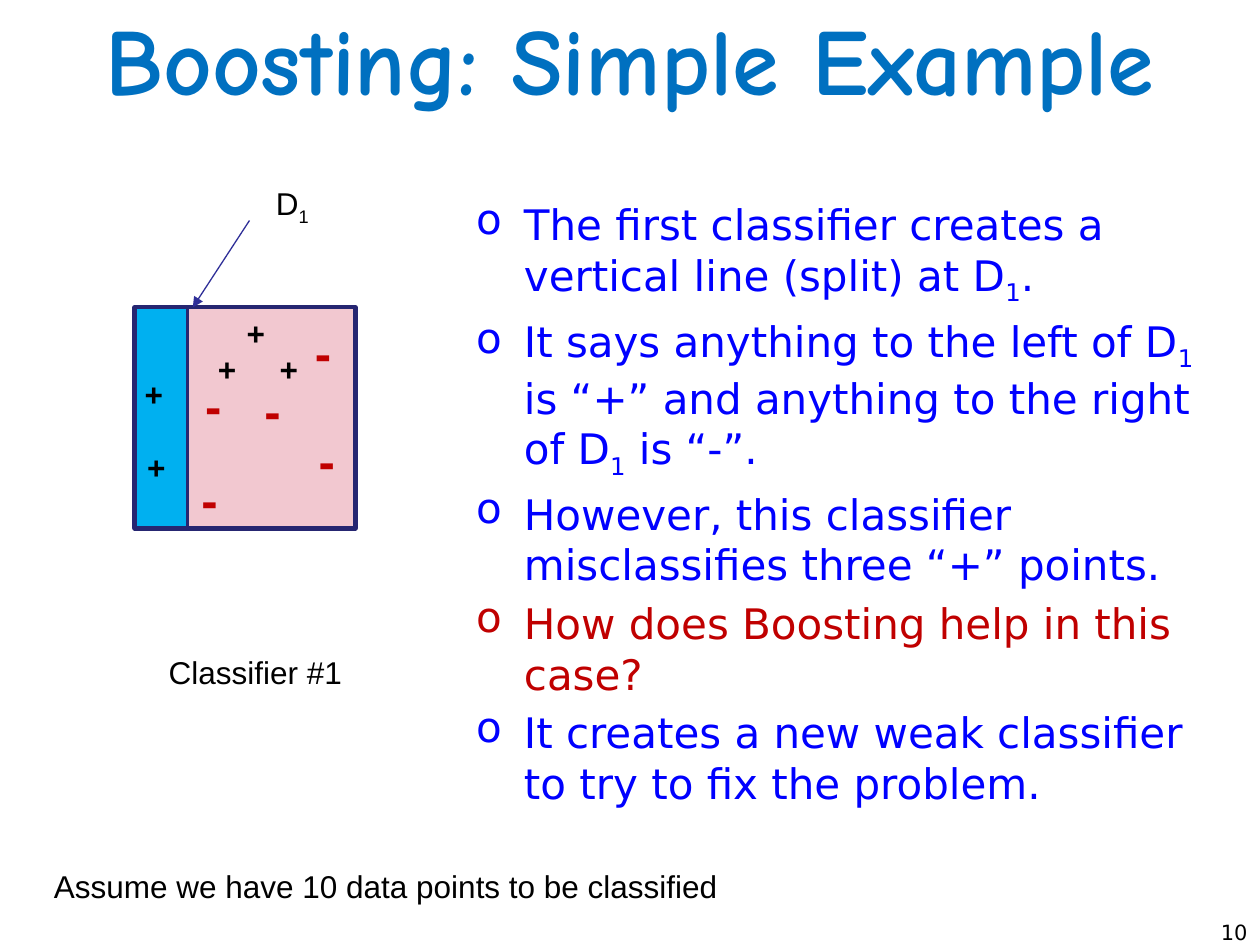
from lxml import etree
from pptx import Presentation
from pptx import util as u
from pptx.dml.color import RGBColor
from pptx.enum import shapes, text
from pptx.oxml.ns import qn

BLACK, BLUE, RED, NAVY = "000000", "0000FF", "C00000", "262671"
LABEL = dict(size=18, name="Arial", color=BLACK)
BODY = dict(size=24, name="DejaVu Sans")

TITLE = "Boosting: Simple Example"
# Text between underscores is set as a subscript.
BULLETS = [
    ("The first classifier creates a vertical line (split) at D_1_.", BLUE),
    ("It says anything to the left of D_1_ is “+” and anything "
     "to the right of D_1_ is “-”.", BLUE),
    ("However, this classifier misclassifies three “+” points.", BLUE),
    ("How does Boosting help in this case?", RED),
    ("It creates a new weak classifier to try to fix the problem.", BLUE),
]
LABELS = [
    ("D_1_", (2.09, 1.41, 0.48, 0.4)),
    ("Assume we have 10 data points to be classified", (0.33, 6.83, 5.52, 0.4)),
    ("Classifier #1", (1.24, 5.13, 1.59, 0.4)),
]
# Data points: sign, box size, format, top left corners
POINTS = [
    ("+", (0.35, 0.4), dict(LABEL, bold=True),
     [(2.12, 2.73), (1.86, 2.44), (1.63, 2.73), (1.07, 3.51), (1.05, 2.93)]),
    ("-", (0.33, 0.57), dict(size=28, name="Arial", color=RED, bold=True),
     [(2.4, 2.51), (2, 2.97), (2.43, 3.37), (1.5, 3.68), (1.53, 2.93)]),
]
LEFT, TOP, SIDE, SPLIT = 1.07, 2.44, 1.75, 0.42
REGIONS = [  # offset, width, fill, line width
    (0, SIDE, None, 3),
    (0, SPLIT, "00B0F0", 2),
    (SPLIT, SIDE - SPLIT, "F2C8D0", 2),
]


def rgb(value):
    return RGBColor.from_string(value)


def inches(values):
    return [u.Inches(v) for v in values]


def add_runs(p, words, fmt):
    """Write words into p; every second part between underscores is lowered."""
    for i, part in enumerate(words.split("_")):
        r = p.add_run()
        r.text = part
        for key, value in fmt.items():
            if key == "color":
                r.font.color.rgb = rgb(value)
            else:
                setattr(r.font, key, u.Pt(value) if key == "size" else value)
        if i % 2:
            r.font._element.set("baseline", "-25000")


def add_text(parent, words, box, fmt, wrap=False, align=None,
             anchor=text.MSO_ANCHOR.TOP):
    tf = parent.add_textbox(*inches(box)).text_frame
    tf.word_wrap = wrap
    tf.vertical_anchor = anchor
    p = tf.paragraphs[0]
    p.alignment = align
    add_runs(p, words, fmt)


def add_bullets(parent, box):
    tf = parent.add_textbox(*inches(box)).text_frame
    tf.word_wrap = True
    for i, (words, color) in enumerate(BULLETS):
        p = tf.add_paragraph() if i else tf.paragraphs[0]
        p.space_before = u.Pt(4.8)
        add_runs(p, words, dict(BODY, color=color))
        pPr = p._p.get_or_add_pPr()
        pPr.set("marL", str(u.Inches(0.38)))
        pPr.set("indent", str(-u.Inches(0.38)))
        etree.SubElement(pPr, qn("a:buChar")).set("char", "o")


def add_region(parent, offset, width, fill, line):
    sp = parent.add_shape(shapes.MSO_SHAPE.RECTANGLE,
                          *inches((LEFT + offset, TOP, width, SIDE)))
    sp.shadow.inherit = False
    if fill:
        sp.fill.solid()
        sp.fill.fore_color.rgb = rgb(fill)
    else:
        sp.fill.background()
    sp.line.color.rgb = rgb(NAVY)
    sp.line.width = u.Pt(line)


def add_arrow(parent, start, end):
    cn = parent.add_connector(shapes.MSO_CONNECTOR.STRAIGHT, *inches(start + end))
    cn.line.color.rgb = rgb("2F2F98")
    cn.line.width = u.Pt(0.75)
    etree.SubElement(cn.line._get_or_add_ln(), qn("a:tailEnd")).set("type", "triangle")
    etree.SubElement(cn._element.spPr, qn("a:effectLst"))


def main():
    prs = Presentation()
    prs.slide_width, prs.slide_height = inches((10, 7.5))
    s = prs.slides.add_slide(prs.slide_layouts[6]).shapes

    add_text(s, TITLE, (0, 0, 10, 0.92),
             dict(size=54, name="Comic Neue", color="0070C0", bold=True),
             wrap=True, align=text.PP_ALIGN.CENTER, anchor=text.MSO_ANCHOR.MIDDLE)
    add_text(s, "10", (9.38, 7.25, 0.62, 0.25),
             dict(BODY, size=12, color=BLACK), wrap=True, align=text.PP_ALIGN.RIGHT)

    plot = s.add_group_shape().shapes
    for region in REGIONS:
        add_region(plot, *region)
    for sign, size, fmt, corners in POINTS:
        for corner in corners:
            add_text(plot, sign, corner + size, fmt)

    add_bullets(s, (3.68, 1.53, 5.98, 5.13))
    add_arrow(s, (1.98, 1.75), (1.53, TOP))
    for words, box in LABELS:
        add_text(s, words, box, LABEL)
    prs.save("out.pptx")


if __name__ == "__main__":
    main()
